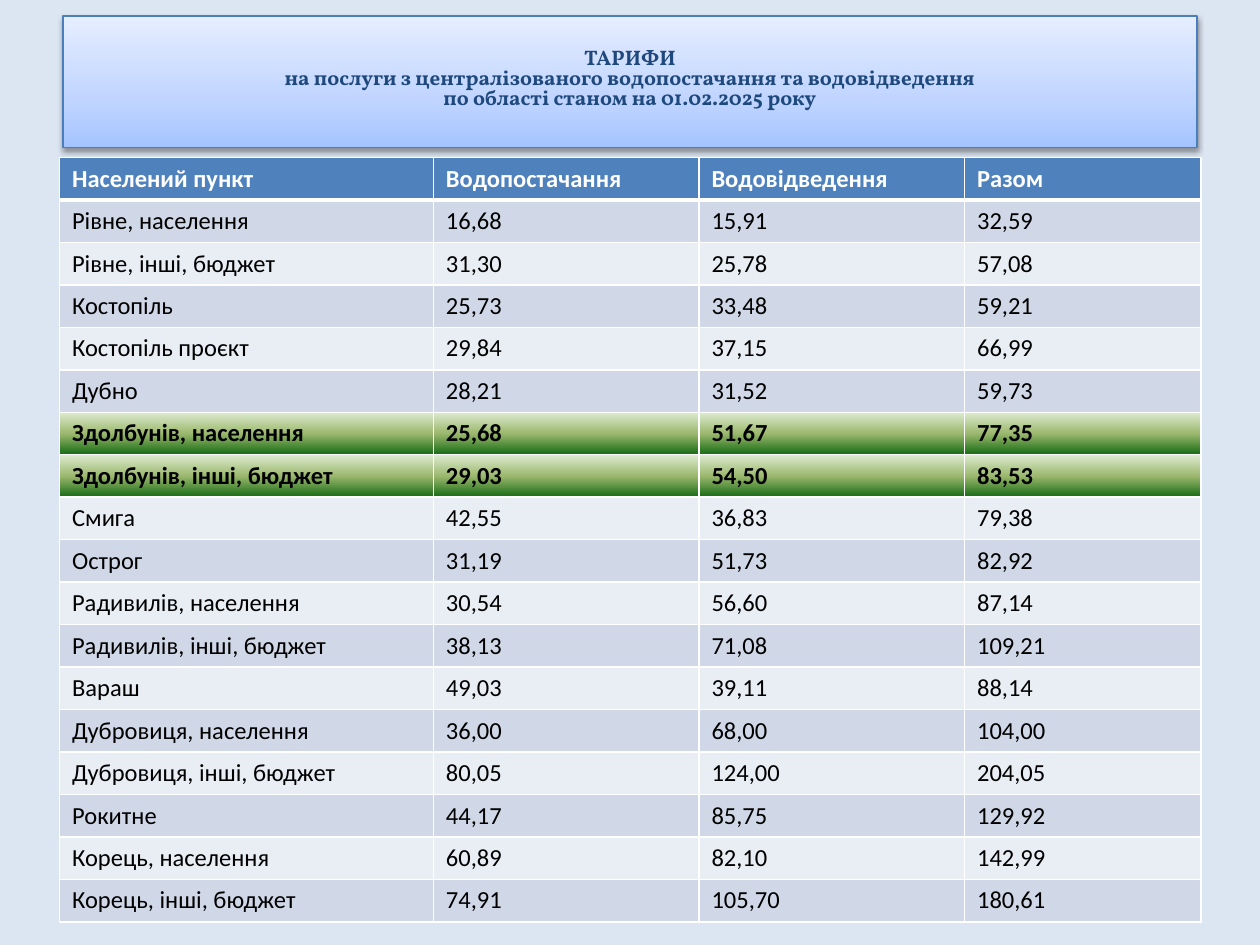
from pptx import Presentation
from pptx.dml.color import RGBColor
from pptx.enum.text import MSO_ANCHOR as Anchor, MSO_AUTO_SIZE as AutoSize, PP_ALIGN as Align
from pptx.oxml import parse_xml
from pptx.oxml.ns import nsdecls
from pptx.util import Pt

BACKGROUND = RGBColor(0xDC, 0xE6, 0xF2)
BLACK = RGBColor(0x00, 0x00, 0x00)
WHITE = RGBColor(0xFF, 0xFF, 0xFF)
NAVY = RGBColor(0x1F, 0x49, 0x7D)
TITLE_LINE = RGBColor(0x4B, 0x7E, 0xBC)
HEADER_FILL = RGBColor(0x4F, 0x81, 0xBD)
DARK_BAND = RGBColor(0xD0, 0xD8, 0xE8)
LIGHT_BAND = RGBColor(0xE9, 0xED, 0xF4)
TITLE_GRADIENT = [
    (0, RGBColor(0xA4, 0xC4, 0xFF)),
    (35, RGBColor(0xBF, 0xD4, 0xFF)),
    (100, RGBColor(0xE6, 0xEE, 0xFF)),
]
HIGHLIGHT_GRADIENT = [
    (0, RGBColor(0xDD, 0xEB, 0xCF)),
    (50, RGBColor(0x9C, 0xB8, 0x6E)),
    (100, RGBColor(0x15, 0x6B, 0x13)),
]

TITLE_LINES = [
    "ТАРИФИ",
    "на послуги з централізованого водопостачання та водовідведення",
    "по області станом на 01.02.2025 року",
]
HEADERS = ("Населений пункт", "Водопостачання", "Водовідведення", "Разом")
TARIFFS = [
    ("Рівне, населення", "16,68", "15,91", "32,59"),
    ("Рівне, інші, бюджет", "31,30", "25,78", "57,08"),
    ("Костопіль", "25,73", "33,48", "59,21"),
    ("Костопіль проєкт", "29,84", "37,15", "66,99"),
    ("Дубно", "28,21", "31,52", "59,73"),
    ("Здолбунів, населення", "25,68", "51,67", "77,35"),
    ("Здолбунів, інші, бюджет", "29,03", "54,50", "83,53"),
    ("Смига", "42,55", "36,83", "79,38"),
    ("Острог", "31,19", "51,73", "82,92"),
    ("Радивилів, населення", "30,54", "56,60", "87,14"),
    ("Радивилів, інші, бюджет", "38,13", "71,08", "109,21"),
    ("Вараш", "49,03", "39,11", "88,14"),
    ("Дубровиця, населення", "36,00", "68,00", "104,00"),
    ("Дубровиця, інші, бюджет", "80,05", "124,00", "204,05"),
    ("Рокитне", "44,17", "85,75", "129,92"),
    ("Корець, населення", "60,89", "82,10", "142,99"),
    ("Корець, інші, бюджет", "74,91", "105,70", "180,61"),
]
HIGHLIGHTED_TOWN = "Здолбунів"
COLUMN_SHARES = (2.97, 2.11, 2.11, 1.88)


def gradient_fill(stops, angle):
    """Return a linear gradient fill element."""
    stop_list = "".join(
        f'<a:gs pos="{position * 1000}"><a:srgbClr val="{color}"/></a:gs>'
        for position, color in stops
    )
    return parse_xml(
        f'<a:gradFill {nsdecls("a")} rotWithShape="1"><a:gsLst>{stop_list}</a:gsLst>'
        f'<a:lin ang="{angle * 60000}" scaled="0"/></a:gradFill>'
    )


def outer_shadow():
    """Return the soft shadow that falls below the title box."""
    return parse_xml(
        f'<a:effectLst {nsdecls("a")}><a:outerShdw blurRad="{Pt(3.1)}" dist="{Pt(1.6)}" '
        f'dir="5400000" rotWithShape="0"><a:srgbClr val="{BLACK}">'
        '<a:alpha val="38000"/></a:srgbClr></a:outerShdw></a:effectLst>'
    )


def place_title(slide, left, top, width, height):
    """Format the title placeholder as a shaded box."""
    title = slide.shapes.title
    title.left, title.top, title.width, title.height = left, top, width, height
    properties = title.element.spPr
    properties.append(gradient_fill(TITLE_GRADIENT, 270))
    title.line.color.rgb = TITLE_LINE
    title.line.width = Pt(0.75)
    properties.append(outer_shadow())

    frame = title.text_frame
    frame.text = "\n".join(TITLE_LINES)
    frame.word_wrap = True
    frame.auto_size = AutoSize.NONE
    frame.vertical_anchor = Anchor.MIDDLE
    frame.margin_bottom = Pt(6.6)
    for paragraph in frame.paragraphs:
        paragraph.alignment = Align.CENTER
        paragraph.line_spacing = 0.8
        font = paragraph.font
        font.name, font.size, font.bold = "Vollkorn", Pt(12), True
        font.color.rgb = NAVY


def set_borders(cell, top, bottom):
    """Draw white cell borders with the given top and bottom widths."""
    widths = {"lnL": 1, "lnR": 1, "lnT": top, "lnB": bottom}
    for side, width in widths.items():
        cell._tc.get_or_add_tcPr().append(parse_xml(
            f'<a:{side} {nsdecls("a")} w="{Pt(width)}"><a:solidFill>'
            f'<a:srgbClr val="{WHITE}"/></a:solidFill></a:{side}>'
        ))


def format_cell(cell, text, row_index, highlighted):
    """Write one table cell in the style of its row."""
    is_header = row_index == 0
    set_borders(cell, 3 if row_index == 1 else 1, 3 if is_header else 1)
    if highlighted:
        cell._tc.get_or_add_tcPr().append(gradient_fill(HIGHLIGHT_GRADIENT, 90))
    else:
        band = DARK_BAND if row_index % 2 else LIGHT_BAND
        cell.fill.solid()
        cell.fill.fore_color.rgb = HEADER_FILL if is_header else band
    cell.text = text
    font = cell.text_frame.paragraphs[0].font
    font.name, font.size, font.bold = "Calibri", Pt(14), is_header or highlighted
    font.color.rgb = WHITE if is_header else BLACK


def place_tariff_table(slide, left, top, width, height):
    """Add the tariff table with equal rows in the given box."""
    rows = [HEADERS, *TARIFFS]
    table = slide.shapes.add_table(len(rows), len(HEADERS), left, top, width, height).table
    for column, share in zip(table.columns, COLUMN_SHARES):
        column.width = int(width * share / sum(COLUMN_SHARES))
    for row_index, values in enumerate(rows):
        table.rows[row_index].height = int(height / len(rows))
        highlighted = values[0].startswith(HIGHLIGHTED_TOWN)
        for column_index, text in enumerate(values):
            format_cell(table.cell(row_index, column_index), text, row_index, highlighted)


def main():
    """Build and save the tariff slide."""
    presentation = Presentation()
    presentation.slide_width, presentation.slide_height = Pt(720), Pt(540)
    slide = presentation.slides.add_slide(presentation.slide_layouts[5])
    slide.background.fill.solid()
    slide.background.fill.fore_color.rgb = BACKGROUND
    place_title(slide, Pt(36), Pt(9.2), Pt(648), Pt(75))
    place_tariff_table(slide, Pt(34), Pt(90), Pt(652.4), Pt(433.4))
    presentation.save("out.pptx")


if __name__ == "__main__":
    main()
